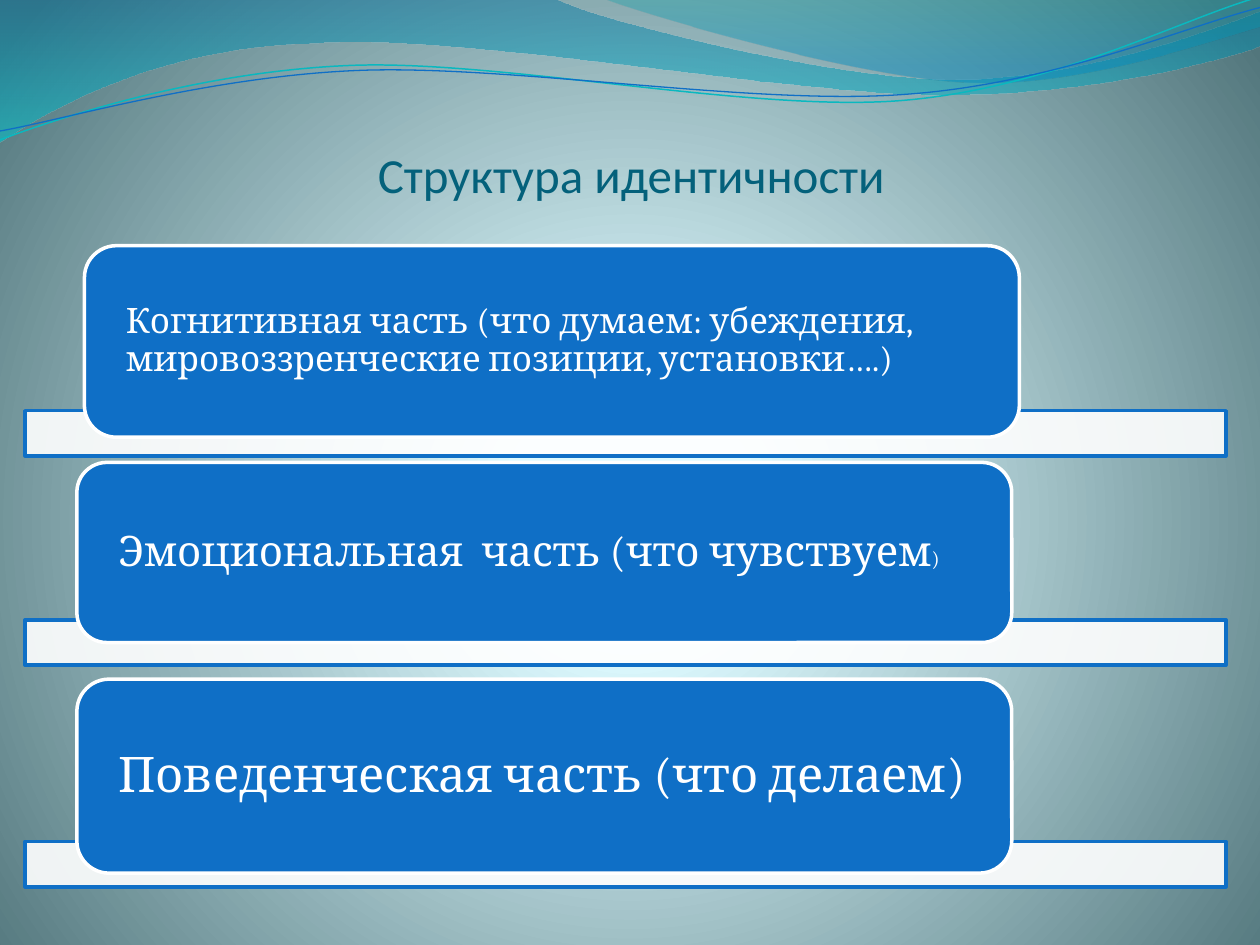
from math import cos, radians, sin

from pptx import Presentation
from pptx.dml.color import RGBColor
from pptx.enum.shapes import MSO_SHAPE as Shape
from pptx.enum.text import MSO_ANCHOR as Anchor, PP_ALIGN as Align
from pptx.oxml import parse_xml
from pptx.oxml.ns import nsdecls
from pptx.util import Inches, Pt

BLUE, WHITE, TEAL = "0F6FC6", "FFFFFF", "04617B"
DOWNWARD = '<a:lin {ns} ang="5400000" scaled="1"/>'
RADIAL = ('<a:path {ns} path="circle">'
          '<a:fillToRect l="10000" t="110000" r="10000" b="100000"/></a:path>')
BACKGROUND = [(0, "DEFBFF", 100), (16, "DDFAFF", 100), (100, "52767C", 100)]
TILT = 2.7

WAVES = [
    ([(0, 0), (4.4, -0.01),
      (4.76, 0.17, 6.64, 0.63, 7.58, 0.63), (8.53, 0.63, 9.58, 0.26, 10, 0.09),
      (10.01, 0.36),
      (9.83, 0.44, 8.7, 0.76, 7.46, 0.75), (6.22, 0.75, 3.82, 0.28, 2.57, 0.34),
      (1.29, 0.36, 0.46, 0.83, -0.01, 1.13), (0, 0)],
     [(0, "0074A1", 45), (100, "00C6CF", 55)]),
    ([(4.79, -0.01),
      (5.09, 0.11, 6.82, 0.62, 7.69, 0.65), (8.56, 0.69, 9.61, 0.32, 10, 0.21),
      (10, 0), (4.79, -0.01)],
     [(0, "00A1A9", 30), (80, "008BBF", 45)]),
]
STRANDS = [
    ([(0, 1.11), (0.48, 0.93, 1.58, 0.57, 2.77, 0.52),
      (3.95, 0.47, 5.93, 0.89, 7.13, 0.8), (8.33, 0.71, 9.38, 0.15, 9.98, -0.02)],
     (4.99, 0.57), "0AB8BF", 0.85),
    ([(0, 1.04), (0.47, 0.96, 1.64, 0.61, 2.83, 0.56),
      (4.03, 0.51, 5.97, 0.84, 7.17, 0.75), (8.36, 0.67, 9.41, 0.21, 10, 0.06)],
     (5, 0.59), BLUE, 0.75),
]
PARTS = [
    (3.26, 0.67, 1.95, 1.52,
     [("Когнитивная часть (что думаем: убеждения, "
       "мировоззренческие позиции, установки….)", 20)]),
    (4.92, 0.61, 3.67, 1.43,
     [("Эмоциональная  часть (что чувствуем", 24), (")", 12)]),
    (6.68, 0.61, 5.39, 1.54, [("Поведенческая часть (что делаем)", 28)]),
]


def color(value):
    """Turn a hex string into a colour."""
    return RGBColor.from_string(value)


def apply_format(target, values):
    """Set attributes of an object from a dict."""
    for name, value in values.items():
        setattr(target, name, value)


def set_alpha(element, percent):
    """Make the solid fill of a shape element partly transparent."""
    tint = element.xpath("./p:spPr/a:solidFill/a:srgbClr")[0]
    tint.append(parse_xml(f'<a:alpha {nsdecls("a")} val="{percent * 1000}"/>'))


def paint_gradient(fill, element, stops, direction):
    """Give a fill a gradient of (position, colour, opacity) stops."""
    fill.gradient()
    gradient = element.xpath(".//a:gradFill")[0]
    for child in list(gradient):
        gradient.remove(child)
    marks = "".join(
        f'<a:gs pos="{place * 1000}"><a:srgbClr val="{tint}">'
        f'<a:alpha val="{alpha * 1000}"/></a:srgbClr></a:gs>'
        for place, tint, alpha in stops)
    gradient.append(parse_xml(f'<a:gsLst {nsdecls("a")}>{marks}</a:gsLst>'))
    gradient.append(parse_xml(direction.format(ns=nsdecls("a"))))


def pairs(segment):
    """Split a flat segment into (x, y) points."""
    return list(zip(segment[::2], segment[1::2]))


def turn(segment, pivot, degrees):
    """Rotate the points of a segment clockwise about a pivot."""
    angle = radians(degrees)
    turned = []
    for x, y in pairs(segment):
        across, down = x - pivot[0], y - pivot[1]
        turned += [pivot[0] + across * cos(angle) - down * sin(angle),
                   pivot[1] + across * sin(angle) + down * cos(angle)]
    return turned


def add_outline(parent, path, close):
    """Add a freeform of straight lines and Bezier curves."""
    ends = [tuple(map(Inches, segment[-2:])) for segment in path]
    builder = parent.shapes.build_freeform(*ends[0])
    builder.add_line_segments(ends[1:], close=close)
    outline = builder.convert_to_shape()
    outline.shadow.inherit = False
    for line, segment in zip(outline._element.xpath(".//a:lnTo"), path[1:]):
        if len(segment) == 6:
            points = "".join(
                f'<a:pt x="{Inches(x) - outline.left}" y="{Inches(y) - outline.top}"/>'
                for x, y in pairs(segment))
            curve = parse_xml(f'<a:cubicBezTo {nsdecls("a")}>{points}</a:cubicBezTo>')
            line.getparent().replace(line, curve)
    return outline


def add_wave(parent, path, stops):
    """Add a filled wave without a line."""
    wave = add_outline(parent, path, True)
    paint_gradient(wave.fill, wave._element, stops, DOWNWARD)
    wave.line.fill.background()


def add_strand(parent, path, pivot, tint, width):
    """Add a thin open curve in a tilted frame."""
    strand = add_outline(parent, [turn(segment, pivot, TILT) for segment in path], False)
    strand.rotation = 360 - TILT
    strand.fill.background()
    strand.line.color.rgb = color(tint)
    strand.line.width = Pt(width)


def add_block(parent, kind, area, fill, line):
    """Add a filled preset shape with a line of two points."""
    block = parent.shapes.add_shape(kind, *map(Inches, area))
    block.shadow.inherit = False
    block.fill.solid()
    block.fill.fore_color.rgb = color(fill)
    block.line.color.rgb = color(line)
    block.line.width = Pt(2)
    return block


def add_text(parent, area, spans, font, tint, frame_format, para_format):
    """Add a text box with one paragraph of (text, size) spans."""
    frame = parent.shapes.add_textbox(*map(Inches, area)).text_frame
    apply_format(frame, {"word_wrap": True, **frame_format})
    para = frame.paragraphs[0]
    apply_format(para, para_format)
    for text, size in spans:
        span = para.add_run()
        span.text = text
        apply_format(span.font, {"name": font, "size": Pt(size)})
        span.font.color.rgb = color(tint)


def add_part(parent, bar_top, left, top, height, spans):
    """Add a white bar with a rounded box and its text over it."""
    bar = add_block(parent, Shape.RECTANGLE, (0.2, bar_top, 9.53, 0.36), WHITE, BLUE)
    set_alpha(bar._element, 90)
    width, side, edge = 7.42, 0.08, 0.07
    add_block(parent, Shape.ROUNDED_RECTANGLE, (left, top, width, height), BLUE, WHITE)
    area = (left + side, top + edge, width - 2 * side, height - 2 * edge)
    frame_format = {"vertical_anchor": Anchor.MIDDLE,
                    "margin_left": Inches(0.25), "margin_right": Inches(0.25),
                    "margin_top": 0, "margin_bottom": 0}
    add_text(parent, area, spans, "Cambria", WHITE, frame_format, {"line_spacing": 0.9})


def main():
    """Build the slide and save it."""
    deck = Presentation()
    apply_format(deck, {"slide_width": Inches(10), "slide_height": Inches(7.5)})
    slide = deck.slides.add_slide(deck.slide_layouts[6])
    paint_gradient(slide.background.fill, slide._element, BACKGROUND, RADIAL)
    for wave in WAVES:
        add_wave(slide, *wave)
    strands = slide.shapes.add_group_shape()
    for strand in STRANDS:
        add_strand(strands, *strand)
    title_format = {"vertical_anchor": Anchor.BOTTOM, "margin_left": 0, "margin_right": 0,
                    "margin_top": Inches(0.05), "margin_bottom": 0}
    add_text(slide, (0.51, 0.6, 9, 1.01), [("Структура идентичности", 28)],
             "Calibri", TEAL, title_format, {"alignment": Align.CENTER})
    parts = slide.shapes.add_group_shape()
    for part in PARTS:
        add_part(parts, *part)
    deck.save("out.pptx")


if __name__ == "__main__":
    main()
